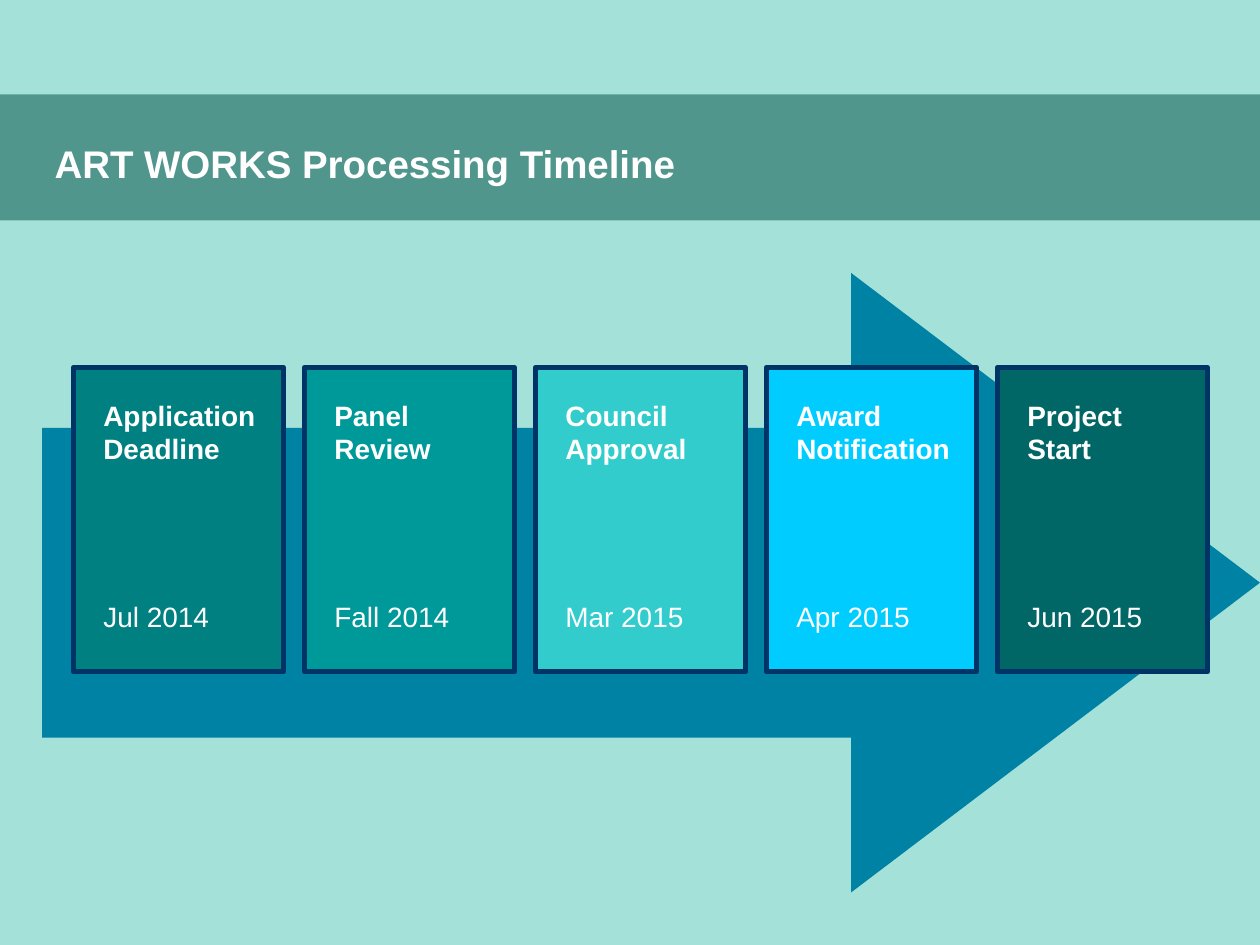
from pptx import Presentation
from pptx.dml.color import RGBColor
from pptx.enum.shapes import MSO_SHAPE as Form
from pptx.enum.text import MSO_ANCHOR as Anchor, PP_ALIGN as Align
from pptx.oxml.ns import qn
from pptx.util import Pt
from lxml.etree import SubElement

HUES = {
    "back": "A3E1D9", "arrow": "0082A5", "band": "0D5A4F",
    "edge": "003366", "text": "FFFFFF",
    "jul": "008080", "fall": "009999", "mar": "33CCCC",
    "apr": "00CCFF", "jun": "006666",
}

# Title lines, date and colour of each step
STEPS = [
    (["Application", "Deadline"], "Jul 2014", "jul"),
    (["Panel Review"], "Fall 2014", "fall"),
    (["Council Approval"], "Mar 2015", "mar"),
    (["Award Notification"], "Apr 2015", "apr"),
    (["Project", "Start"], "Jun 2015", "jun"),
]


def hue(name):
    return RGBColor.from_string(HUES[name])


class Page:
    face = "Arial"
    line = 19.2  # height of one line of card text

    def __init__(self, slide):
        self.slide = slide
        fill = slide.background.fill
        fill.solid()
        fill.fore_color.rgb = hue("back")

    def shape(self, form, box, color, edge=None, home=None):
        shapes = (home or self.slide).shapes
        item = shapes.add_shape(form, *map(Pt, box))
        item.shadow.inherit = False
        item.fill.solid()
        item.fill.fore_color.rgb = hue(color)
        if edge:
            item.line.color.rgb = hue(edge)
            item.line.width = Pt(3)
        else:
            item.line.fill.background()
        return item

    def style(self, para, size, bold):
        para.alignment = Align.LEFT
        for run in para.runs:
            font = run.font
            font.name, font.size, font.bold = self.face, Pt(size), bold
            font.color.rgb = hue("text")

    def arrow(self, box, shaft, head):
        item = self.shape(Form.RIGHT_ARROW, box, "arrow")
        item.adjustments[0] = shaft
        item.adjustments[1] = head

    def band(self, box, alpha):
        item = self.shape(Form.RECTANGLE, box, "band")
        tint = item.fill._xPr.find(qn("a:solidFill"))[0]
        SubElement(tint, qn("a:alpha"), val=str(alpha * 1000))

    def card(self, left, top, lines, date, color):
        group = self.slide.shapes.add_group_shape()
        self.shape(Form.RECTANGLE, (left, top, 120, 174), color, "edge", group)
        panel = self.shape(Form.RECTANGLE, (left + 10, top + 14, 104, 146),
                           color, home=group)
        frame = panel.text_frame
        frame.word_wrap = True
        frame.vertical_anchor = Anchor.TOP
        frame.text = "\n".join(lines + [date])
        for para in frame.paragraphs:
            para.line_spacing = Pt(self.line)
            self.style(para, 16, True)
        # The date stands four lines below the step name
        last = frame.paragraphs[-1]
        last.space_before = Pt(4 * self.line)
        self.style(last, 16, False)

    def title(self, text, box):
        item = self.slide.shapes.title
        item.left, item.top, item.width, item.height = map(Pt, box)
        frame = item.text_frame
        frame.text = text
        frame.word_wrap = True
        frame.vertical_anchor = Anchor.MIDDLE
        self.style(frame.paragraphs[0], 22, True)
        # Bring the title in front of the band
        item.element.getparent().append(item.element)


def main():
    deck = Presentation()
    deck.slide_width, deck.slide_height = Pt(720), Pt(540)
    page = Page(deck.slides.add_slide(deck.slide_layouts[5]))

    # Timeline
    page.arrow((24, 156, 696, 354), 0.5, 0.66)
    for i, step in enumerate(STEPS):
        page.card(42 + 132 * i, 210, *step)

    # Header
    page.band((0, 54, 720, 72), 55)
    page.title("ART WORKS Processing Timeline", (24, 84, 432, 18))

    deck.save("out.pptx")


if __name__ == "__main__":
    main()
